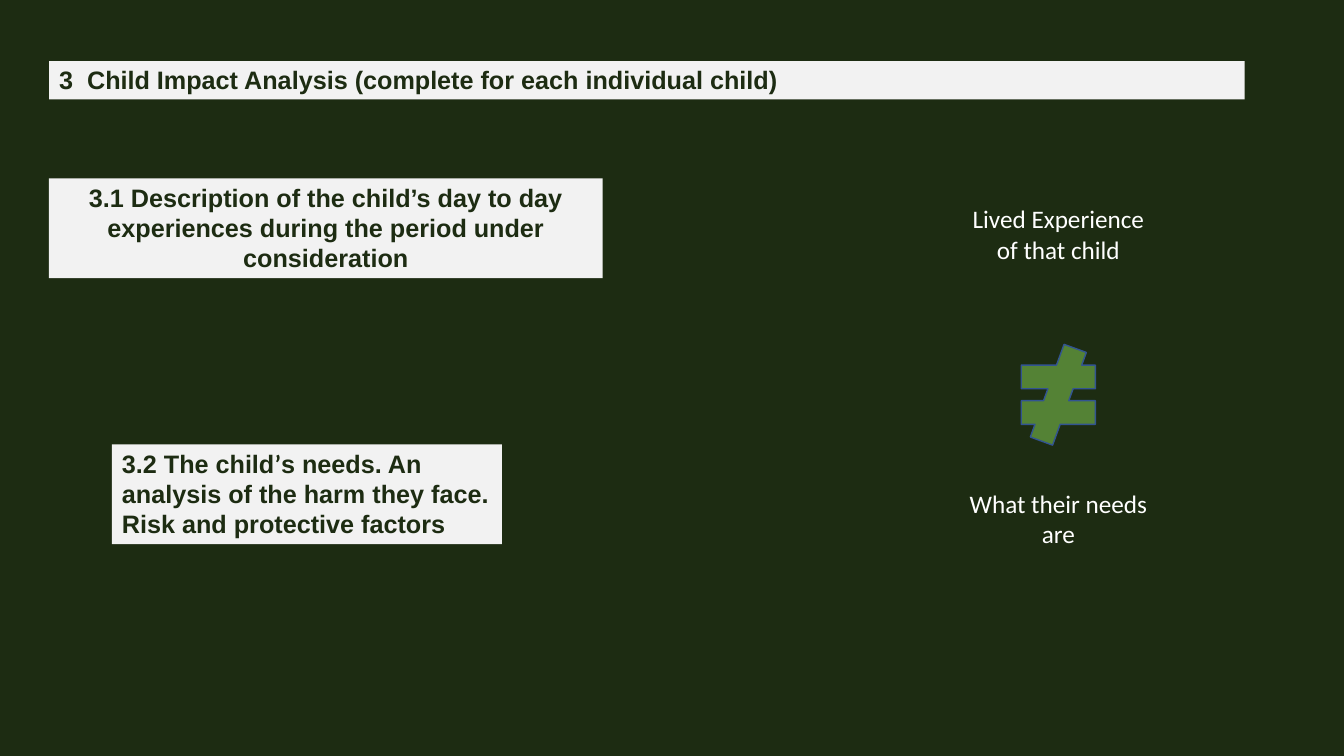
"""Build the Child Impact Analysis slide."""
from pptx import Presentation
from pptx.dml.color import RGBColor
from pptx.enum.shapes import MSO_SHAPE
from pptx.enum.text import MSO_ANCHOR, MSO_AUTO_SIZE, PP_ALIGN
from pptx.util import Pt

DARK_GREEN = RGBColor(0x1D, 0x2C, 0x12)
PALE_GREY = RGBColor(0xF2, 0xF2, 0xF2)
WHITE = RGBColor(0xFF, 0xFF, 0xFF)
LEAF_GREEN = RGBColor(0x54, 0x82, 0x35)
OUTLINE_BLUE = RGBColor(0x32, 0x54, 0x91)


def write(shape, text, font="Arial", apostrophe_font="Arial", color=DARK_GREEN,
          bold=True, align=PP_ALIGN.LEFT, anchor=MSO_ANCHOR.MIDDLE, top=2.4):
    frame = shape.text_frame
    frame.word_wrap = True
    frame.auto_size = MSO_AUTO_SIZE.NONE
    frame.vertical_anchor = anchor
    frame.margin_left = frame.margin_right = Pt(7.2)
    frame.margin_top, frame.margin_bottom = Pt(top), Pt(3.6)
    paragraph = frame.paragraphs[0]
    paragraph.alignment = align
    paragraph.line_spacing = 1.0
    parts = [text] if apostrophe_font == font else text.partition("’")
    for part in parts:
        run = paragraph.add_run()
        run.text = part
        run.font.name = apostrophe_font if part == "’" else font
        run.font.size = Pt(18)
        run.font.bold = bold
        run.font.color.rgb = color


presentation = Presentation()
presentation.slide_width, presentation.slide_height = Pt(960), Pt(540)
slide = presentation.slides.add_slide(presentation.slide_layouts[5])
slide.background.fill.solid()
slide.background.fill.fore_color.rgb = DARK_GREEN

title = slide.shapes.title
title.left, title.top, title.width, title.height = Pt(35), Pt(43.6), Pt(854), Pt(27.4)
title.fill.solid()
title.fill.fore_color.rgb = PALE_GREY
write(title, "3  Child Impact Analysis (complete for each individual child)")

sections = [
    ("3.2 The child’s needs. An analysis of the harm they face. Risk and protective factors",
     80, 317.5, 278.5, PP_ALIGN.LEFT, "Calibri"),
    ("3.1 Description of the child’s day to day experiences during the period under consideration",
     35, 127.5, 395.5, PP_ALIGN.CENTER, "Arial"),
]
for text, left, top, width, align, apostrophe_font in sections:
    section = slide.shapes.add_shape(MSO_SHAPE.RECTANGLE, Pt(left), Pt(top), Pt(width), Pt(71.2))
    section.shadow.inherit = False
    section.fill.solid()
    section.fill.fore_color.rgb = PALE_GREY
    section.line.fill.background()
    write(section, text, align=align, apostrophe_font=apostrophe_font)

captions = [
    ("Lived Experience of that child", 687.5, 142, 137, 72.7),
    ("What their needs are", 673.5, 345, 165, 51),
]
for text, left, top, width, height in captions:
    caption = slide.shapes.add_textbox(Pt(left), Pt(top), Pt(width), Pt(height))
    write(caption, text, font="Calibri", apostrophe_font="Calibri", color=WHITE,
          bold=False, align=PP_ALIGN.CENTER, anchor=MSO_ANCHOR.TOP, top=3.6)

not_equal = slide.shapes.add_shape(MSO_SHAPE.MATH_NOT_EQUAL, Pt(720), Pt(246), Pt(72), Pt(72))
not_equal.shadow.inherit = False
not_equal.fill.solid()
not_equal.fill.fore_color.rgb = LEAF_GREEN
not_equal.line.color.rgb = OUTLINE_BLUE
not_equal.line.width = Pt(1)

presentation.save("out.pptx")
